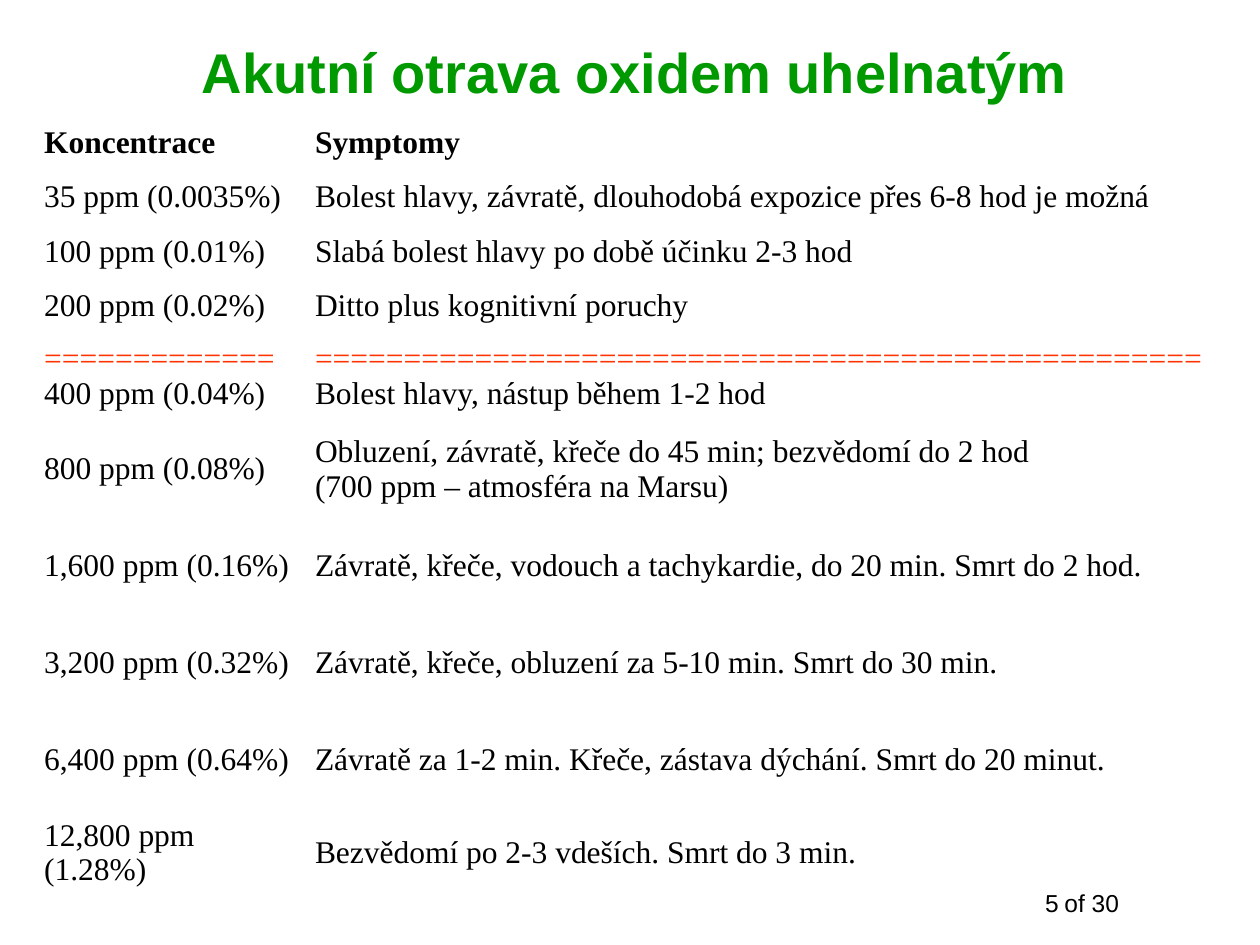
from typing import NamedTuple

from pptx import Presentation
from pptx.dml.color import RGBColor
from pptx.enum.text import MSO_ANCHOR, PP_ALIGN
from pptx.util import Inches, Pt

BLACK = RGBColor(0x00, 0x00, 0x00)
GREEN = RGBColor(0x00, 0x99, 0x00)
RED = RGBColor(0xFF, 0x33, 0x00)


class Label(NamedTuple):
    text: str
    left: float
    top: float
    width: float
    height: float
    size: int
    color: RGBColor
    align: PP_ALIGN
    bold: bool = False


class Row(NamedTuple):
    height: float
    concentration: str
    symptoms: str


LABELS = [
    Label("of 30", 8.08, 7, 1.17, 0.5, 14, BLACK, PP_ALIGN.CENTER),
    Label("5", 6.42, 7, 2.08, 0.5, 14, BLACK, PP_ALIGN.RIGHT),
    Label("Akutní otrava oxidem uhelnatým", 0.33, 0.25, 9.42, 0.63, 32, GREEN,
          PP_ALIGN.CENTER, bold=True),
]

COLUMN_WIDTHS = [2.15, 7.27]
ROWS = [
    Row(0.43, "Koncentrace", "Symptomy"),
    Row(0.43, "35 ppm (0.0035%)",
        "Bolest hlavy, závratě, dlouhodobá expozice přes 6-8 hod je možná"),
    Row(0.43, "100 ppm (0.01%)", "Slabá bolest hlavy po době účinku 2-3 hod"),
    Row(0.43, "200 ppm (0.02%)", "Ditto plus kognitivní poruchy"),
    Row(0.7, "=" * 13 + "\n400 ppm (0.04%)",
        "=" * 50 + "\nBolest hlavy, nástup během 1-2 hod"),
    Row(0.77, "800 ppm (0.08%)",
        "Obluzení, závratě, křeče do 45 min; bezvědomí do 2 hod\n"
        "(700 ppm – atmosféra na Marsu)"),
    Row(0.77, "1,600 ppm (0.16%)",
        "Závratě, křeče, vodouch a tachykardie, do 20 min. Smrt do 2 hod."),
    Row(0.77, "3,200 ppm (0.32%)",
        "Závratě, křeče, obluzení za 5-10 min. Smrt do 30 min."),
    Row(0.77, "6,400 ppm (0.64%)",
        "Závratě za 1-2 min. Křeče, zástava dýchání. Smrt do 20 minut."),
    Row(0.7, "12,800 ppm (1.28%)", "Bezvědomí po 2-3 vdeších. Smrt do 3 min."),
]


def format_runs(para, font_name: str, size: int, color: RGBColor, bold: bool) -> None:
    for span in para.runs:
        span.font.name = font_name
        span.font.size = Pt(size)
        span.font.color.rgb = color
        span.font.bold = bold


def add_label(page, label: Label) -> None:
    box = page.shapes.add_textbox(Inches(label.left), Inches(label.top),
                                  Inches(label.width), Inches(label.height))
    box.text_frame.word_wrap = True
    box.text_frame.text = label.text
    para = box.text_frame.paragraphs[0]
    para.alignment = label.align
    format_runs(para, "Arial", label.size, label.color, label.bold)


def fill_cell(cell, text: str, bold: bool) -> None:
    cell.fill.background()
    cell.vertical_anchor = MSO_ANCHOR.MIDDLE
    cell.text_frame.text = text
    for para in cell.text_frame.paragraphs:
        color = RED if para.text.startswith("=") else BLACK
        format_runs(para, "Times New Roman", 18, color, bold)


def add_symptom_table(page) -> None:
    frame = page.shapes.add_table(
        len(ROWS), len(COLUMN_WIDTHS), Inches(0.25), Inches(0.92),
        Inches(sum(COLUMN_WIDTHS)), Inches(sum(row.height for row in ROWS)))
    table = frame.table
    table.first_row = False
    table.horz_banding = False
    for column, width in zip(table.columns, COLUMN_WIDTHS):
        column.width = Inches(width)
    for index, row in enumerate(ROWS):
        table.rows[index].height = Inches(row.height)
        for cell, text in zip(table.rows[index].cells,
                              (row.concentration, row.symptoms)):
            fill_cell(cell, text, bold=index == 0)


def main() -> None:
    deck = Presentation()
    deck.slide_width = Inches(10)
    deck.slide_height = Inches(7.5)
    page = deck.slides.add_slide(deck.slide_layouts[6])
    add_symptom_table(page)
    for label in LABELS:
        add_label(page, label)
    deck.save("out.pptx")


if __name__ == "__main__":
    main()
